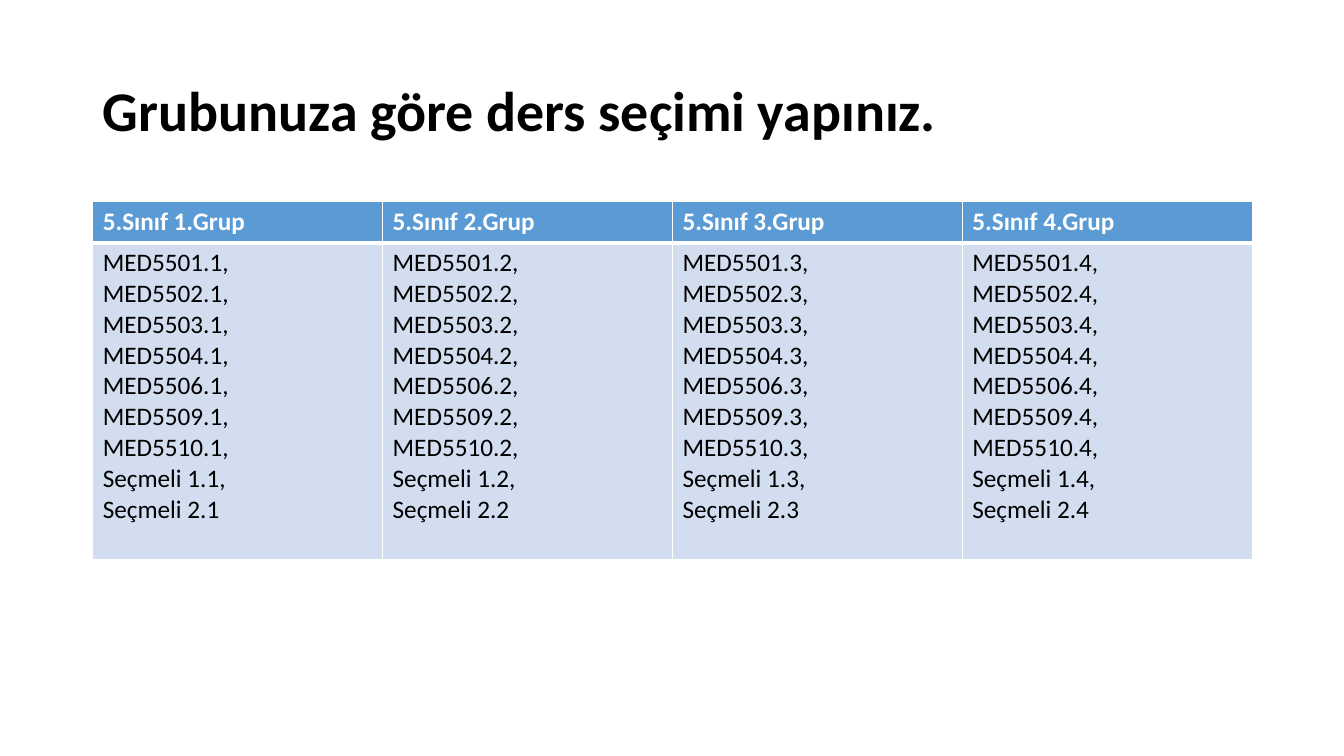
from dataclasses import dataclass

from lxml.etree import SubElement
from pptx import Presentation
from pptx.dml.color import RGBColor
from pptx.enum.text import MSO_ANCHOR, PP_ALIGN
from pptx.oxml import parse_xml
from pptx.oxml.ns import nsdecls, qn
from pptx.util import Inches, Pt


@dataclass(frozen=True)
class Theme:
    font: str = "Calibri"
    ink: str = "000000"
    paper: str = "FFFFFF"
    header: str = "5B9BD5"
    body: str = "D2DEEF"
    title_size: int = 40
    cell_size: int = 18
    thin: int = 1
    thick: int = 3


THEME = Theme()
GROUPS = range(1, 5)
COURSES = [f"MED{n}" for n in (5501, 5502, 5503, 5504, 5506, 5509, 5510)]
COURSES += ["Seçmeli 1", "Seçmeli 2"]


def write(tf, text, size=THEME.cell_size, color=THEME.ink, bold=False, spacing=1.0):
    """Fill a text frame with one paragraph per line of text."""
    tf.text = text
    for p in tf.paragraphs:
        p.alignment = PP_ALIGN.LEFT
        p.line_spacing = spacing
        for r in p.runs:
            r.font.name = THEME.font
            r.font.size = Pt(size)
            r.font.bold = bold
            r.font.color.rgb = RGBColor.from_string(color)


def set_borders(cell, **widths):
    """Draw cell edges; keys are L, R, T, B and values are points."""
    tc_pr = cell._tc.get_or_add_tcPr()
    for i, side in enumerate("LRTB"):
        ln = parse_xml(f'<a:ln{side} {nsdecls("a")} w="{Pt(widths[side])}"/>')
        fill = SubElement(ln, qn("a:solidFill"))
        SubElement(fill, qn("a:srgbClr"), val=THEME.paper)
        tc_pr.insert(i, ln)


def add_title(slide, text, left, top, width, height):
    sp = slide.shapes.title
    sp.left, sp.top, sp.width, sp.height = left, top, width, height
    tf = sp.text_frame
    tf.word_wrap = True
    tf.vertical_anchor = MSO_ANCHOR.MIDDLE
    write(tf, text, size=THEME.title_size, bold=True, spacing=0.9)


def add_group_table(slide, left, top, width, height, header_height):
    table = slide.shapes.add_table(2, len(GROUPS), left, top, width, height).table
    table.rows[0].height = header_height
    table.rows[1].height = height - header_height
    for col, group in enumerate(GROUPS):
        table.columns[col].width = width // len(GROUPS)
        header, body = table.cell(0, col), table.cell(1, col)
        write(header.text_frame, f"5.Sınıf {group}.Grup", color=THEME.paper, bold=True)
        write(body.text_frame, ",\n".join(f"{c}.{group}" for c in COURSES))
        for cell, fill, above, below in (
            (header, THEME.header, THEME.thin, THEME.thick),
            (body, THEME.body, THEME.thick, THEME.thin),
        ):
            cell.fill.solid()
            cell.fill.fore_color.rgb = RGBColor.from_string(fill)
            set_borders(cell, L=THEME.thin, R=THEME.thin, T=above, B=below)


def main():
    prs = Presentation()
    prs.slide_width, prs.slide_height = Inches(13.33), Inches(7.5)
    slide = prs.slides.add_slide(prs.slide_layouts[5])
    left, width = Inches(0.92), Inches(11.5)
    add_title(slide, "Grubunuza göre ders seçimi yapınız.",
              left, Inches(0.4), width, Inches(1.45))
    add_group_table(slide, left, Inches(2), width, Inches(3.55), Inches(0.41))
    prs.save("out.pptx")


if __name__ == "__main__":
    main()
